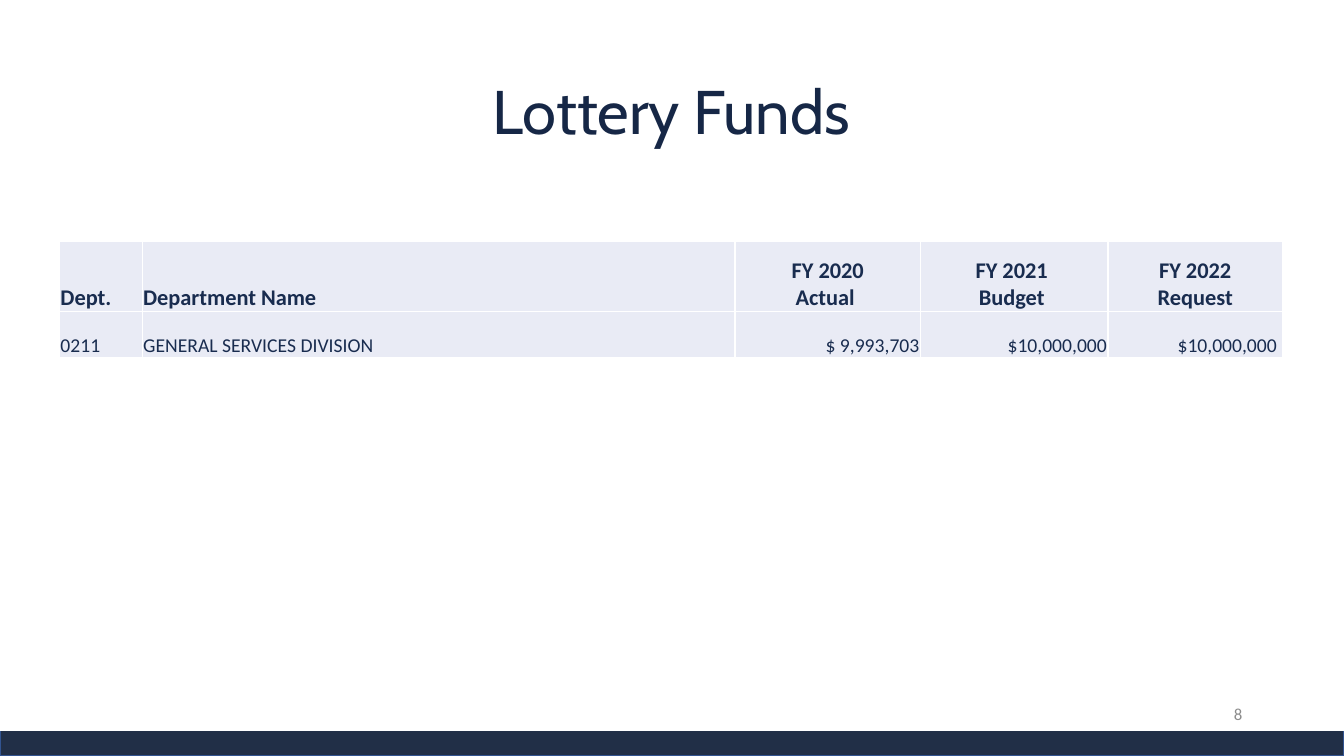
from pptx import Presentation
from pptx.dml.color import RGBColor
from pptx.enum.shapes import MSO_SHAPE
from pptx.enum.text import MSO_ANCHOR, PP_ALIGN
from pptx.util import Inches, Pt

LEFT, CENTER, RIGHT = PP_ALIGN.LEFT, PP_ALIGN.CENTER, PP_ALIGN.RIGHT
MIDDLE, BOTTOM = MSO_ANCHOR.MIDDLE, MSO_ANCHOR.BOTTOM
RECTANGLE = MSO_SHAPE.RECTANGLE
NAVY = "192C4F"
WIDTH, HEIGHT = 13.33, 7.5


def rgb(hex_color):
    return RGBColor.from_string(hex_color)


def write(frame, text, size, color, font="Calibri", bold=False,
          align=LEFT, anchor=MIDDLE, spacing=None):
    """Fill a text frame or cell; each line of text becomes a paragraph."""
    frame.vertical_anchor = anchor
    body = getattr(frame, "text_frame", frame)
    body.text = text
    body.word_wrap = True
    for paragraph in body.paragraphs:
        paragraph.alignment = align
        paragraph.line_spacing = spacing
        style = paragraph.runs[0].font
        style.name, style.size, style.bold = font, Pt(size), bold
        style.color.rgb = rgb(color)


deck = Presentation()
deck.slide_width, deck.slide_height = Inches(WIDTH), Inches(HEIGHT)
slide = deck.slides.add_slide(deck.slide_layouts[5])

# Footer band with a thin white strip along its top edge
band_height, strip_height = 0.25, 0.05
band_top = HEIGHT - band_height
for top, height, fill, outline in [
    (band_top, band_height, "212F47", "325491"),
    (band_top - strip_height, strip_height, "FFFFFF", None),
]:
    band = slide.shapes.add_shape(
        RECTANGLE, 0, Inches(top), Inches(WIDTH), Inches(height))
    band.shadow.inherit = False
    band.fill.solid()
    band.fill.fore_color.rgb = rgb(fill)
    if outline:
        band.line.color.rgb = rgb(outline)
        band.line.width = Pt(1)
    else:
        band.line.fill.background()

title = slide.shapes.title
title.left, title.top = Inches(0.91), Inches(0.51)
title.width, title.height = Inches(11.5), Inches(1.25)
write(title.text_frame, "Lottery Funds", 44, "162746", font="Cabin",
      align=CENTER, spacing=0.9)

# Lottery fund amounts by department
column_widths = [0.82, 5.88, 1.84, 1.86, 1.73]
row_heights = [0.7, 0.46]
fund_rows = [
    ["Dept.", "Department Name", " FY 2020 \nActual ", "FY 2021 \nBudget ",
     "FY 2022\nRequest"],
    ["0211", "GENERAL SERVICES DIVISION", "$ 9,993,703", "$10,000,000",
     "$10,000,000 "],
]
funds = slide.shapes.add_table(
    len(row_heights), len(column_widths), Inches(0.59), Inches(2.39),
    Inches(sum(column_widths)), Inches(sum(row_heights))).table
funds.first_row = funds.horz_banding = False
for column, width in zip(funds.columns, column_widths):
    column.width = Inches(width)

for r, (height, values) in enumerate(zip(row_heights, fund_rows)):
    funds.rows[r].height = Inches(height)
    is_header = r == 0
    for c, value in enumerate(values):
        cell = funds.cell(r, c)
        cell.margin_left = cell.margin_right = cell.margin_top = Inches(0.01)
        cell.margin_bottom = 0
        cell.fill.solid()
        cell.fill.fore_color.rgb = rgb("E9EBF5")
        amount_align = CENTER if is_header else RIGHT
        write(cell, value, 16 if is_header else 14, NAVY, bold=is_header,
              align=amount_align if c >= 2 else LEFT, anchor=BOTTOM)

page_number = slide.shapes.add_textbox(
    Inches(9.42), Inches(6.88), Inches(3), Inches(0.4))
write(page_number.text_frame, "8", 12, "8C8C8C", align=RIGHT)

deck.save("out.pptx")
